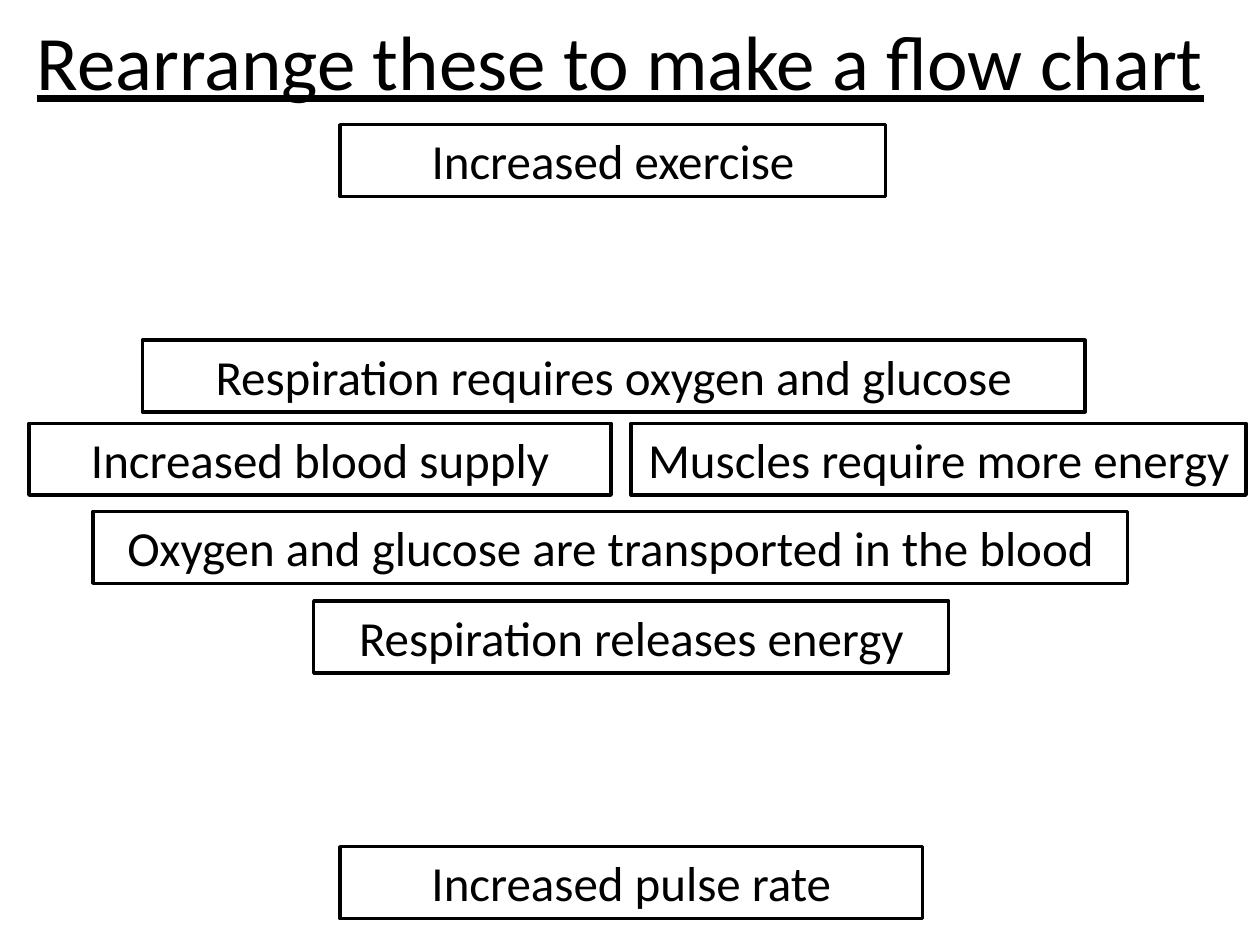
import pptx
import pptx.util
import pptx.dml.color
import pptx.enum.shapes
import pptx.enum.text

Inches = pptx.util.Inches
BLACK = pptx.dml.color.RGBColor(0, 0, 0)
WHITE = pptx.dml.color.RGBColor(255, 255, 255)
FONT = "Calibri"
STEP_HEIGHT = 0.57

TITLE = "Rearrange these to make a flow chart"
STEPS = [
    ("Increased exercise", 2.7, 0.99, 4.33),
    ("Respiration requires oxygen and glucose", 1.13, 2.7, 7.48),
    ("Increased blood supply", 0.23, 3.36, 4.62),
    ("Muscles require more energy", 5.01, 3.36, 4.88),
    ("Oxygen and glucose are transported in the blood", 0.74, 4.06, 8.21),
    ("Respiration releases energy", 2.49, 4.77, 5.04),
    ("Increased pulse rate", 2.7, 6.72, 4.62),
]


def write_text(box, text, size, underline=False,
               anchor=pptx.enum.text.MSO_ANCHOR.TOP):
    frame = box.text_frame
    frame.word_wrap = True
    frame.vertical_anchor = anchor
    para = frame.paragraphs[0]
    para.alignment = pptx.enum.text.PP_ALIGN.CENTER
    span = para.add_run()
    span.text = text
    span.font.name = FONT
    span.font.size = pptx.util.Pt(size)
    span.font.color.rgb = BLACK
    if underline:
        span.font.underline = True


def add_step(page, text, left, top, width):
    box = page.shapes.add_shape(
        pptx.enum.shapes.MSO_SHAPE.RECTANGLE,
        Inches(left), Inches(top), Inches(width), Inches(STEP_HEIGHT))
    box.shadow.inherit = False
    box.fill.background()
    box.line.color.rgb = BLACK
    box.line.width = pptx.util.Pt(2)
    write_text(box, text, size=28)
    box.text_frame.auto_size = pptx.enum.text.MSO_AUTO_SIZE.SHAPE_TO_FIT_TEXT


def main():
    deck = pptx.Presentation()
    deck.slide_width = Inches(10)
    deck.slide_height = Inches(7.5)
    page = deck.slides.add_slide(deck.slide_layouts[6])
    page.background.fill.solid()
    page.background.fill.fore_color.rgb = WHITE

    title = page.shapes.add_textbox(
        Inches(0.12), Inches(0.05), Inches(9.61), Inches(0.85))
    write_text(title, TITLE, size=44, underline=True,
               anchor=pptx.enum.text.MSO_ANCHOR.MIDDLE)
    for step in STEPS:
        add_step(page, *step)
    deck.save("out.pptx")


if __name__ == "__main__":
    main()
